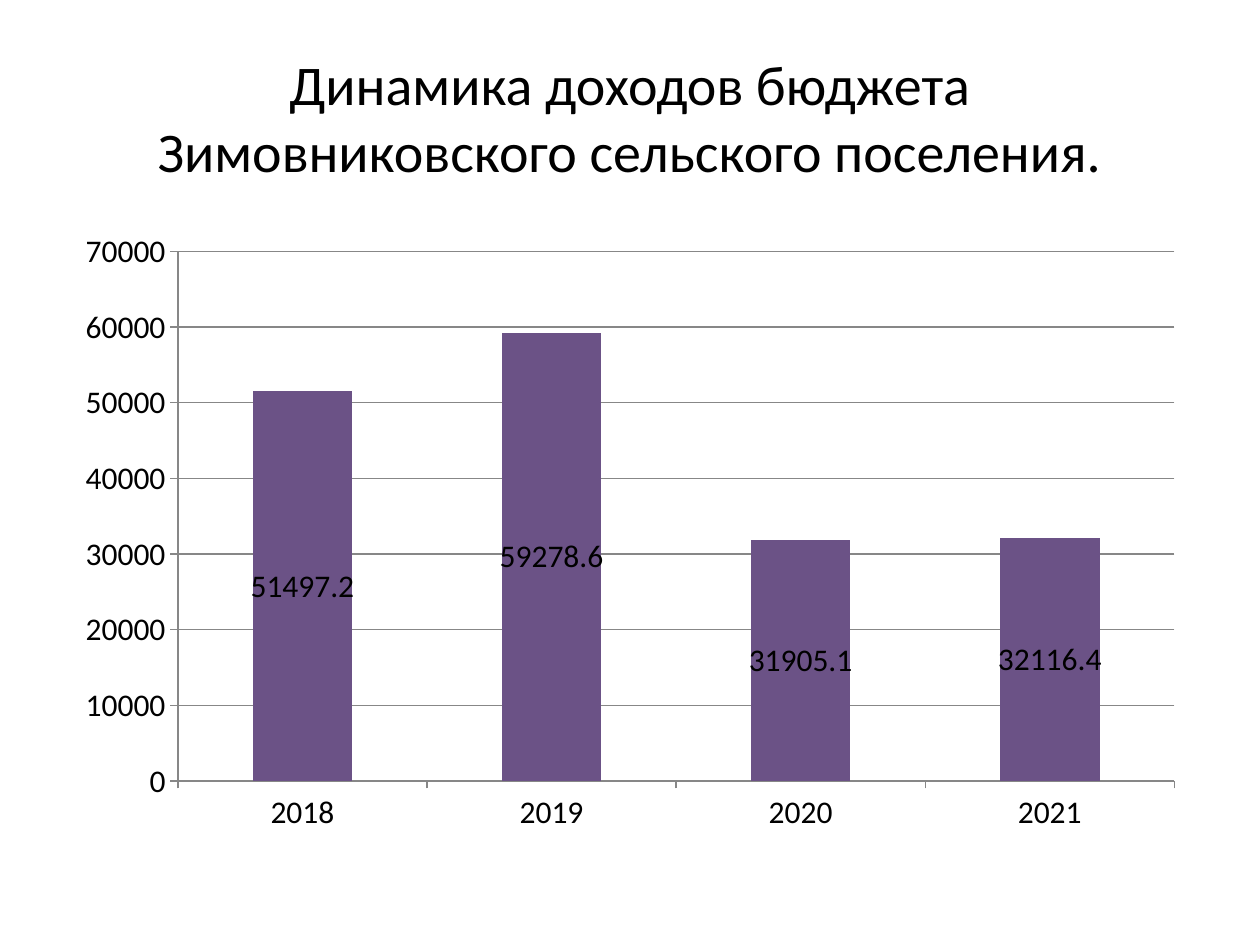
import pptx
import pptx.util
import pptx.dml.color
import pptx.chart.data
import pptx.enum.chart
import pptx.enum.text

# Content
TITLE = "Динамика доходов бюджета Зимовниковского сельского поселения."
YEARS = ["2018", "2019", "2020", "2021"]
SERIES = [
    ("Series 1", (51497.2, 59278.6, 31905.1, 32116.4)),
    ("Series 2", (0, 0, 0, 0)),
    ("Series 3", (0, 0, 0, 0)),
]

# Theme
THEME = {
    "font": "Calibri", "title_size": 32, "chart_size": 18,
    "text": "000000", "axis": "878787",
    "series": ["6B5286", "C0504D", "9BBB59"],
}

# Layout in px: left, top, width, height
PX = 914400 // 126
PAGE_SIZE = (1260, 945)
TITLE_BOX = (63, 38, 1134, 157)
CHART_BOX = (63, 220, 1134, 624)


def emu(lengths):
    return [pptx.util.Emu(length * PX) for length in lengths]


def color(name):
    return pptx.dml.color.RGBColor.from_string(name)


def style_font(font, size):
    font.name = THEME["font"]
    font.size = pptx.util.Pt(size)
    font.color.rgb = color(THEME["text"])


def style_line(line):
    line.color.rgb = color(THEME["axis"])
    line.width = pptx.util.Pt(0.75)


def add_title(page):
    box = page.shapes.title
    box.left, box.top, box.width, box.height = emu(TITLE_BOX)
    frame = box.text_frame
    frame.text = TITLE
    frame.word_wrap = True
    frame.vertical_anchor = pptx.enum.text.MSO_ANCHOR.MIDDLE
    para = frame.paragraphs[0]
    para.alignment = pptx.enum.text.PP_ALIGN.CENTER
    style_font(para.runs[0].font, THEME["title_size"])


def add_income_chart(page):
    data = pptx.chart.data.CategoryChartData()
    data.categories = YEARS
    for name, values in SERIES:
        data.add_series(name, values)
    kind = pptx.enum.chart.XL_CHART_TYPE.COLUMN_STACKED
    chart = page.shapes.add_chart(kind, *emu(CHART_BOX), data).chart
    chart.has_legend = False
    chart.has_title = False
    style_font(chart.font, THEME["chart_size"])

    # Columns and value labels
    plot = chart.plots[0]
    plot.gap_width, plot.overlap = 150, 100
    plot.vary_by_categories = False
    for series, fill in zip(plot.series, THEME["series"]):
        series.format.fill.solid()
        series.format.fill.fore_color.rgb = color(fill)
    labels = plot.series[0].data_labels
    labels.show_value = True
    style_font(labels.font, THEME["chart_size"])

    # Axes and gridlines
    for axis in (chart.category_axis, chart.value_axis):
        axis.major_tick_mark = pptx.enum.chart.XL_TICK_MARK.OUTSIDE
        axis.minor_tick_mark = pptx.enum.chart.XL_TICK_MARK.NONE
        style_line(axis.format.line)
    scale = chart.value_axis
    scale.minimum_scale, scale.maximum_scale, scale.major_unit = 0, 70000, 10000
    scale.has_major_gridlines = True
    style_line(scale.major_gridlines.format.line)


def main():
    deck = pptx.Presentation()
    deck.slide_width, deck.slide_height = emu(PAGE_SIZE)
    page = deck.slides.add_slide(deck.slide_layouts[5])
    add_title(page)
    add_income_chart(page)
    deck.save("out.pptx")


if __name__ == "__main__":
    main()
